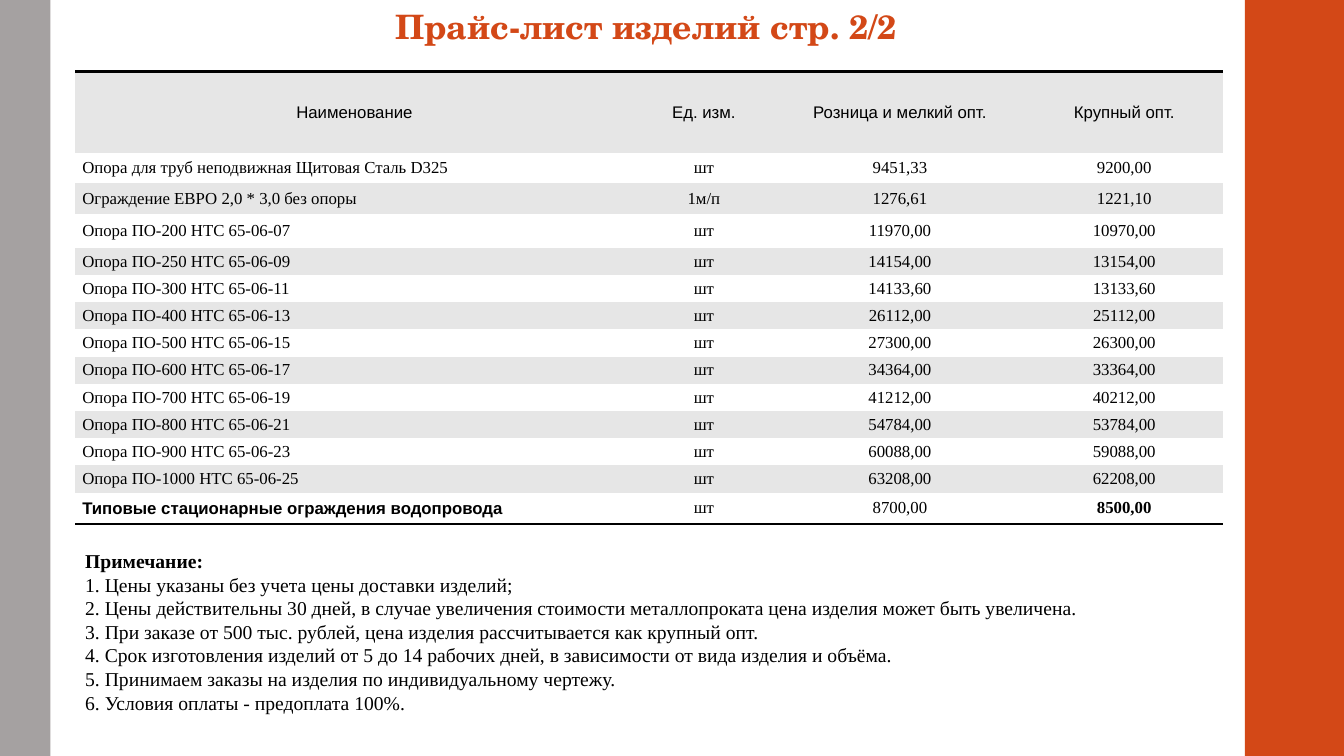
from lxml import etree
from pptx import Presentation
from pptx.dml.color import RGBColor
from pptx.enum.shapes import MSO_SHAPE
from pptx.enum.text import MSO_ANCHOR, PP_ALIGN
from pptx.oxml.ns import qn
from pptx.util import Inches, Pt

RECT = MSO_SHAPE.RECTANGLE
MIDDLE = MSO_ANCHOR.MIDDLE
LEFT, CENTER = PP_ALIGN.LEFT, PP_ALIGN.CENTER

ORANGE = RGBColor(0xD3, 0x48, 0x17)
GREY = RGBColor(0xA5, 0xA1, 0xA1)
BAND = RGBColor(0xE6, 0xE6, 0xE6)
WHITE = RGBColor(0xFF, 0xFF, 0xFF)
BLACK = RGBColor(0, 0, 0)

SERIF, SANS, DISPLAY = "Times New Roman", "Arial", "TeX Gyre Schola"
PLAIN_TABLE = "{2D5ABB26-0587-4C30-8999-92F81FD0307C}"
GRID = 100

HEADER = ["Наименование", "Ед. изм.", "Розница и мелкий опт.", "Крупный опт."]
PRICES = [
    ["Опора для труб неподвижная Щитовая Сталь D325", "шт", "9451,33", "9200,00"],
    ["Ограждение ЕВРО 2,0 * 3,0 без опоры", "1м/п", "1276,61", "1221,10"],
    ["Опора ПО-200 НТС 65-06-07", "шт", "11970,00", "10970,00"],
    ["Опора ПО-250 НТС 65-06-09", "шт", "14154,00", "13154,00"],
    ["Опора ПО-300 НТС 65-06-11", "шт", "14133,60", "13133,60"],
    ["Опора ПО-400 НТС 65-06-13", "шт", "26112,00", "25112,00"],
    ["Опора ПО-500 НТС 65-06-15", "шт", "27300,00", "26300,00"],
    ["Опора ПО-600 НТС 65-06-17", "шт", "34364,00", "33364,00"],
    ["Опора ПО-700 НТС 65-06-19", "шт", "41212,00", "40212,00"],
    ["Опора ПО-800 НТС 65-06-21", "шт", "54784,00", "53784,00"],
    ["Опора ПО-900 НТС 65-06-23", "шт", "60088,00", "59088,00"],
    ["Опора ПО-1000 НТС 65-06-25", "шт", "63208,00", "62208,00"],
    ["Типовые стационарные ограждения водопровода", "шт", "8700,00", "8500,00"],
]
COLUMNS = [41.56, 10.43, 18.75, 14.63]
ROWS = [10.8, 4, 4, 4.53] + [3.6] * 9 + [4.13]
NOTES = [
    "Примечание:",
    "1. Цены указаны без учета цены доставки изделий;",
    "2. Цены действительны 30 дней, в случае увеличения стоимости "
    "металлопроката цена изделия может быть увеличена.",
    "3. При заказе от 500 тыс. рублей, цена изделия рассчитывается как крупный опт.",
    "4. Срок изготовления изделий от 5 до 14 рабочих дней, "
    "в зависимости от вида изделия и объёма.",
    "5. Принимаем заказы на изделия по индивидуальному чертежу.",
    "6. Условия оплаты - предоплата 100%.",
]


def write(p, text, font=SERIF, size=12, color=BLACK, bold=False, align=LEFT):
    p.alignment = align
    r = p.add_run()
    r.text = text
    r.font.name = font
    r.font.size = Pt(size)
    r.font.bold = bold
    r.font.color.rgb = color


class Sheet:
    def __init__(self, prs):
        self.s = prs.slides.add_slide(prs.slide_layouts[6])
        self.col = prs.slide_width / GRID
        self.row = prs.slide_height / GRID

    def box(self, x, y, w, h):
        return [int(x * self.col), int(y * self.row),
                int(w * self.col), int(h * self.row)]

    def block(self, x, y, w, h, fill):
        sp = self.s.shapes.add_shape(RECT, *self.box(x, y, w, h))
        sp.shadow.inherit = False
        sp.fill.solid()
        sp.fill.fore_color.rgb = fill
        sp.line.fill.background()
        return sp

    def title(self, x, y, w, h, text):
        tf = self.block(x, y, w, h, WHITE).text_frame
        tf.word_wrap = True
        tf.vertical_anchor = MIDDLE
        p = tf.paragraphs[0]
        p.line_spacing = 0.9
        write(p, text, font=DISPLAY, size=24, color=ORANGE, bold=True, align=CENTER)

    def notes(self, x, y, w, h, lines):
        tf = self.s.shapes.add_textbox(*self.box(x, y, w, h)).text_frame
        tf.word_wrap = True
        for i, line in enumerate(lines):
            p = tf.add_paragraph() if i else tf.paragraphs[0]
            write(p, line, size=14, bold=i == 0)

    def rule(self, cell, side):
        ln = etree.SubElement(cell._tc.get_or_add_tcPr(), qn(side), w=str(Pt(2)))
        fill = etree.SubElement(ln, qn("a:solidFill"))
        etree.SubElement(fill, qn("a:srgbClr"), val=str(BLACK))

    def cell(self, cell, text, fill, margin, **style):
        cell.margin_left = cell.margin_right = Inches(margin)
        cell.margin_top = cell.margin_bottom = 0
        cell.vertical_anchor = MIDDLE
        cell.fill.solid()
        cell.fill.fore_color.rgb = fill
        write(cell.text_frame.paragraphs[0], text, **style)

    def table(self, x, y, columns, rows, data):
        frame = self.s.shapes.add_table(
            len(rows), len(columns), *self.box(x, y, sum(columns), sum(rows)))
        table = frame.table
        table.first_row = table.horz_banding = False
        table._tbl.tblPr.find(qn("a:tableStyleId")).text = PLAIN_TABLE
        for column, w in zip(table.columns, columns):
            column.width = int(w * self.col)
        for row, h in zip(table.rows, rows):
            row.height = int(h * self.row)
        last = len(data) - 1
        for i, values in enumerate(data):
            for j, text in enumerate(values):
                cell = table.cell(i, j)
                if i == 0:
                    self.rule(cell, "a:lnT")
                if i == last:
                    self.rule(cell, "a:lnB")
                self.cell(
                    cell, text,
                    fill=WHITE if i % 2 else BAND,
                    margin=0.07 if i else 0.01,
                    font=SANS if i == 0 or (i == last and j == 0) else SERIF,
                    bold=i == last and j in (0, 3),
                    align=LEFT if i and j == 0 else CENTER)


def main():
    prs = Presentation()
    prs.slide_width, prs.slide_height = Inches(13.33), Inches(7.5)
    sheet = Sheet(prs)
    sheet.block(92.63, 0, 7.37, GRID, ORANGE)
    sheet.block(0, 0, 3.75, GRID, GREY)
    sheet.title(4.58, 1.07, 87, 5.33, "Прайс-лист изделий стр. 2/2")
    sheet.table(5.6, 9.47, COLUMNS, ROWS, [HEADER] + PRICES)
    sheet.notes(5.6, 72, 83.7, 23.33, NOTES)
    prs.save("out.pptx")


if __name__ == "__main__":
    main()
